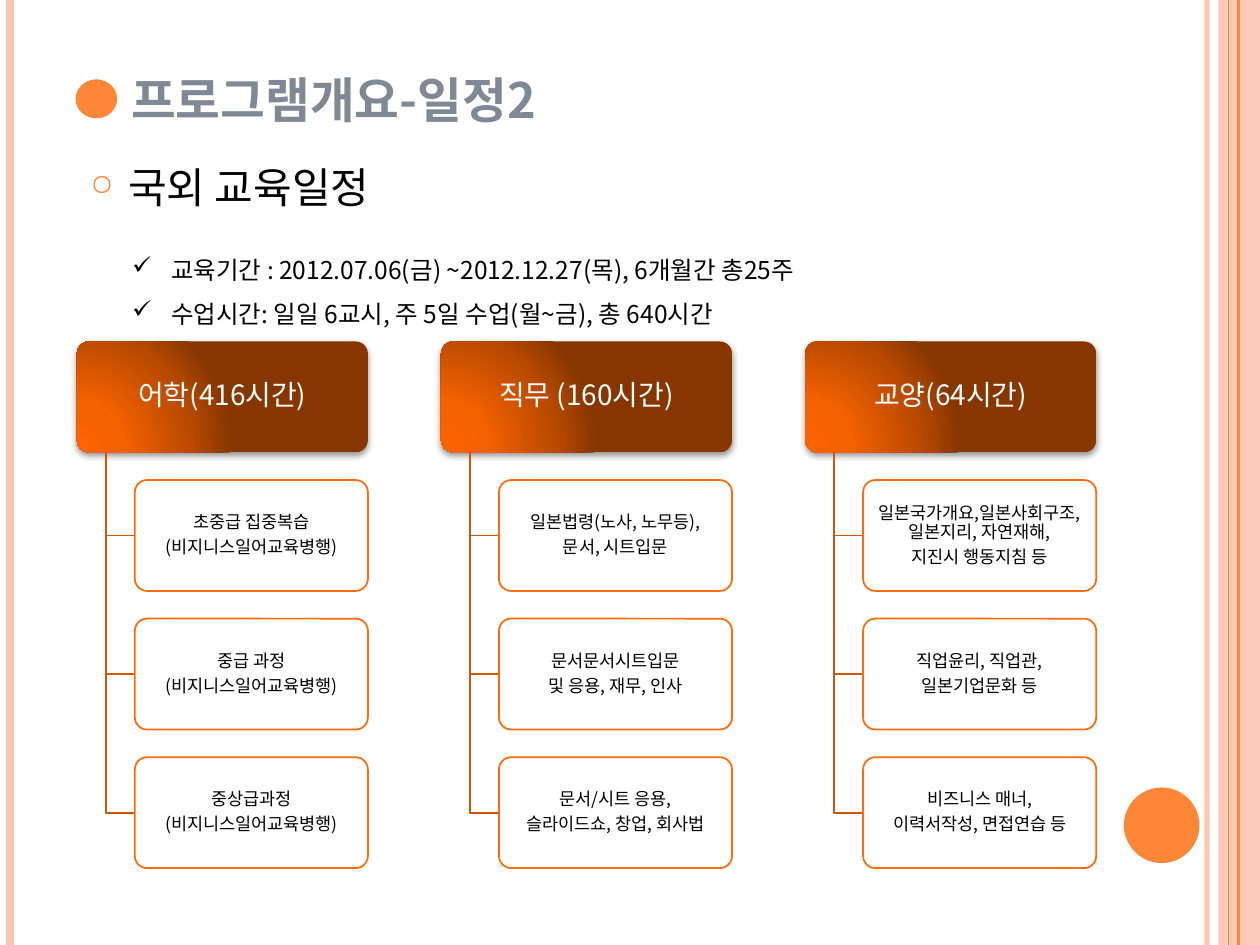
from lxml import etree
from pptx import Presentation
from pptx.dml.color import RGBColor
from pptx.enum.shapes import MSO_CONNECTOR as Connector, MSO_SHAPE as Preset
from pptx.enum.text import MSO_ANCHOR as Anchor, PP_ALIGN as Align
from pptx.oxml import parse_xml
from pptx.oxml.ns import nsdecls, qn
from pptx.util import Inches, Pt

FONT = "Noto Sans CJK KR"
ORANGE, PEACH, WHITE, BLACK = "FE8637", "FEC3AE", "FFFFFF", "000000"

# Course grid, in inches
LEFT, TOP = 0.61, 2.71
COLUMN_PITCH, ROW_PITCH = 2.89, 1.1
HEADER_WIDTH, BOX_HEIGHT = 2.31, 0.88
TRUNK_INDENT, COURSE_INDENT = 0.23, 0.46

# Edge lines: x, colour, width in points, opacity
EDGE_LINES = [(9.58, PEACH, 3, 93), (0.08, PEACH, 4.5, 100),
              (9.83, ORANGE, 1.5, 100), (9.75, ORANGE, 0.75, 100)]

SCHEDULE = ["교육기간 : 2012.07.06(금) ~2012.12.27(목), 6개월간 총25주",
            "수업시간: 일일 6교시, 주 5일 수업(월~금), 총 640시간"]

SUBJECTS = [
    ("어학(416시간)", [["초중급 집중복습", "(비지니스일어교육병행)"],
                    ["중급 과정", "(비지니스일어교육병행)"],
                    ["중상급과정", "(비지니스일어교육병행)"]]),
    ("직무 (160시간)", [["일본법령(노사, 노무등),", "문서, 시트입문"],
                     ["문서문서시트입문", "및 응용, 재무, 인사"],
                     ["문서/시트 응용,", "슬라이드쇼, 창업, 회사법"]]),
    ("교양(64시간)", [["일본국가개요,일본사회구조, 일본지리, 자연재해,", "지진시 행동지침 등"],
                   ["직업윤리, 직업관,", "일본기업문화 등"],
                   ["비즈니스 매너,", "이력서작성, 면접연습 등"]]),
]

HEADER_FRAME = dict(word_wrap=True, vertical_anchor=Anchor.MIDDLE,
                    margin_left=Inches(0.04), margin_right=Inches(0.04),
                    margin_top=Inches(0.02), margin_bottom=Inches(0.02))
COURSE_FRAME = dict(word_wrap=True, vertical_anchor=Anchor.MIDDLE,
                    margin_left=Inches(0.01), margin_right=Inches(0.01),
                    margin_top=0, margin_bottom=0)


def rgb(color):
    return RGBColor.from_string(color)


def apply(target, formats):
    for name, value in formats.items():
        setattr(target, name, value)


def set_opacity(fill, percent):
    if percent < 100:
        color = fill.fore_color._xFill.find(qn("a:srgbClr"))
        etree.SubElement(color, qn("a:alpha"), val=str(percent * 1000))


def write(frame, lines, color, font, paragraph_format, frame_format):
    apply(frame, frame_format)
    for index, line in enumerate(lines):
        paragraph = frame.paragraphs[0] if index == 0 else frame.add_paragraph()
        apply(paragraph, paragraph_format)
        run = paragraph.add_run()
        run.text = line
        run.font.color.rgb = rgb(color)
        apply(run.font, dict(name=FONT, **font))
        etree.SubElement(run.font._element, qn("a:ea"), typeface=FONT)


def add_text(slide, box, lines, color, font, paragraph_format, **frame_format):
    textbox = slide.shapes.add_textbox(*map(Inches, box))
    write(textbox.text_frame, lines, color, font, paragraph_format,
          dict(word_wrap=True, **frame_format))
    return textbox.text_frame


def add_bullets(frame, char, indent, color=None, percent=None):
    for paragraph in frame.paragraphs:
        props = paragraph._p.get_or_add_pPr()
        props.set("marL", str(Inches(indent)))
        props.set("indent", str(-Inches(indent)))
        if color:
            bullet_color = etree.SubElement(props, qn("a:buClr"))
            etree.SubElement(bullet_color, qn("a:srgbClr"), val=color)
        if percent:
            etree.SubElement(props, qn("a:buSzPct"), val=str(percent * 1000))
        etree.SubElement(props, qn("a:buChar"), char=char)


def add_shape(slide, preset, box, color, opacity=100, outline=None):
    shape = slide.shapes.add_shape(preset, *map(Inches, box))
    shape.shadow.inherit = False
    shape.fill.solid()
    shape.fill.fore_color.rgb = rgb(color)
    set_opacity(shape.fill, opacity)
    if outline:
        shape.line.color.rgb = rgb(outline)
        shape.line.width = Pt(1)
    else:
        shape.line.fill.background()
    return shape


def add_edge_line(slide, x, color, width, opacity):
    line = slide.shapes.add_connector(Connector.STRAIGHT, Inches(x), 0, Inches(x), Inches(7.5))
    line.line.color.rgb = rgb(color)
    line.line.width = Pt(width)
    set_opacity(line.line.fill, opacity)
    etree.SubElement(line._element.spPr, qn("a:effectLst"))


def add_glow_and_shadow(shape):
    stops = [(0, "FD6400"), (30, "F46100"), (75, "B74900"), (100, "873600")]
    stop_xml = "".join(f'<a:gs pos="{pos * 1000}"><a:srgbClr val="{color}"/></a:gs>'
                       for pos, color in stops)
    gradient = parse_xml(
        f'<a:gradFill {nsdecls("a")} rotWithShape="1"><a:gsLst>{stop_xml}</a:gsLst>'
        '<a:path path="circle"><a:fillToRect l="5000" t="100000" r="120000" b="10000"/>'
        '</a:path></a:gradFill>')
    props = shape._element.spPr
    props.replace(props.find(qn("a:solidFill")), gradient)
    shadow = etree.SubElement(props.find(qn("a:effectLst")), qn("a:outerShdw"),
                              blurRad=str(Pt(4)), dist=str(Pt(1.6)), dir="5400000",
                              rotWithShape="0")
    shadow_color = etree.SubElement(shadow, qn("a:srgbClr"), val=BLACK)
    etree.SubElement(shadow_color, qn("a:alpha"), val="42000")


def add_box(slide, box, lines, color, outline, text_color, size, frame_format, opacity=100):
    shape = add_shape(slide, Preset.ROUNDED_RECTANGLE, box, color, opacity, outline)
    shape.adjustments[0] = 0.11
    write(shape.text_frame, lines, text_color, dict(size=Pt(size)),
          dict(alignment=Align.CENTER, line_spacing=0.9, space_after=Pt(0.35 * size)),
          frame_format)
    return shape


def add_branch(slide, x, top, bottom, right):
    builder = slide.shapes.build_freeform(Inches(x), Inches(top))
    builder.add_line_segments([(Inches(x), Inches(bottom)), (Inches(right), Inches(bottom))],
                              close=False)
    branch = builder.convert_to_shape()
    branch.shadow.inherit = False
    branch.fill.background()
    branch.line.color.rgb = rgb("D05504")
    branch.line.width = Pt(1)


def add_subject(slide, left, title, courses):
    header = add_box(slide, (left, TOP, HEADER_WIDTH, BOX_HEIGHT), [title],
                     "873600", None, WHITE, 16, HEADER_FRAME)
    add_glow_and_shadow(header)
    course_left = left + COURSE_INDENT
    for row, lines in enumerate(courses, start=1):
        top = TOP + row * ROW_PITCH
        add_branch(slide, left + TRUNK_INDENT, TOP + BOX_HEIGHT,
                   top + BOX_HEIGHT / 2, course_left)
        add_box(slide, (course_left, top, HEADER_WIDTH - COURSE_INDENT, BOX_HEIGHT), lines,
                WHITE, "FF6B0A", BLACK, 10, COURSE_FRAME, opacity=90)


def main():
    deck = Presentation()
    deck.slide_width, deck.slide_height = Inches(10), Inches(7.5)
    slide = deck.slides.add_slide(deck.slide_layouts[6])

    # Edge decoration
    add_shape(slide, Preset.RECTANGLE, (9.67, 0, 0.33, 7.5), PEACH, opacity=87)
    for edge_line in EDGE_LINES:
        add_edge_line(slide, *edge_line)
    add_shape(slide, Preset.OVAL, (8.92, 6.25, 0.6, 0.6), ORANGE)

    # Heading and title
    heading = add_text(slide, (0.62, 1.23, 8.17, 5.33), ["국외 교육일정"], BLACK,
                       dict(size=Pt(24)), dict(space_before=Pt(6)))
    add_bullets(heading, "○", 0.3, ORANGE, 70)
    add_text(slide, (0.6, 0.37, 4.3, 0.7), ["프로그램개요-일정2"], "818895",
             dict(size=Pt(27.8), bold=True), {},
             vertical_anchor=Anchor.BOTTOM, margin_left=Inches(0.44))
    add_shape(slide, Preset.OVAL, (0.6, 0.63, 0.33, 0.31), ORANGE)

    # Schedule
    schedule = add_text(slide, (0.95, 1.86, 8.33, 0.81), SCHEDULE, BLACK,
                        dict(size=Pt(14)), dict(line_spacing=1.5))
    add_bullets(schedule, "✓", 0.31)

    # Subjects and their courses
    for column, (title, courses) in enumerate(SUBJECTS):
        add_subject(slide, LEFT + column * COLUMN_PITCH, title, courses)

    deck.save("out.pptx")


if __name__ == "__main__":
    main()
